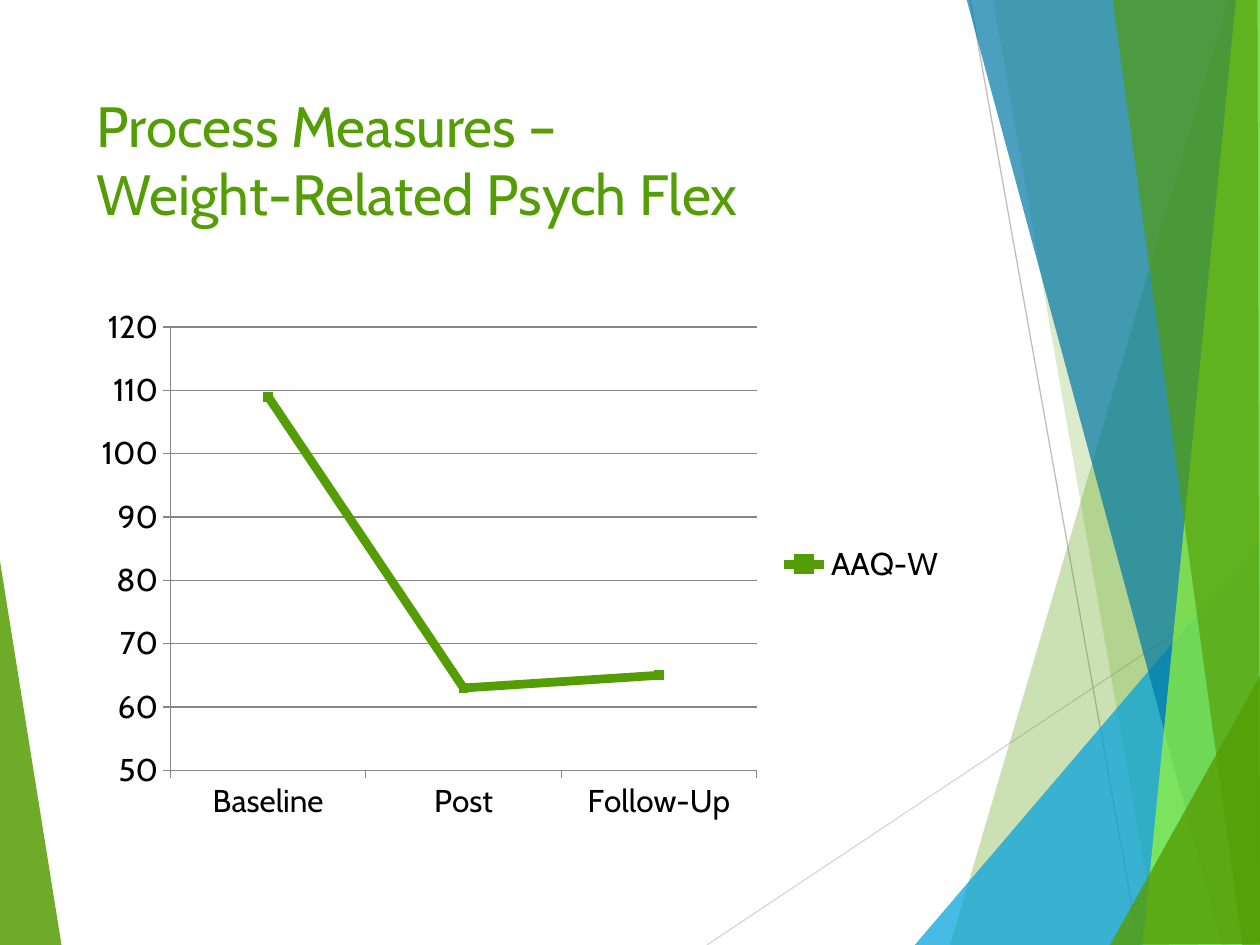
from pptx import Presentation
from pptx import util as u
from pptx.chart.data import CategoryChartData
from pptx.dml.color import RGBColor
from pptx.enum import chart as ch, shapes, text
from pptx.oxml.ns import qn
from lxml import etree

FONT = "Cabin"
GREEN = "549D04"
GRAY = "878787"

RAYS = [
    ("549D04", 30, [(9.75, 0), (7.54, 7.5), (10.02, 7.51), (10.01, 0.01)]),
    ("549D04", 20, [(7.88, -0.01), (9.19, 7.5), (10.01, 7.5), (10.01, -0.01)]),
    ("00A1DC", 72, [(7.26, 7.5), (10, 4.29), (10.01, 7.5)]),
    ("0079A5", 70, [(7.67, -0.01), (9.7, 7.5), (10.01, 7.49), (10.01, -0.01)]),
    ("9BFA33", 70, [(9.81, -0.01), (9.07, 7.5), (10.01, 7.5), (10, -0.01)]),
    ("549D04", 65, [(8.83, -0.01), (9.86, 7.5), (10, 7.5), (9.98, -0.01)]),
    ("549D04", 80, [(8.81, 7.5), (10.01, 5.35), (10.01, 7.49)]),
]


def rgb(color):
    return RGBColor.from_string(color)


def add_ray(s, color, opacity, points):
    start, *rest = [(u.Inches(x), u.Inches(y)) for x, y in points]
    fb = s.shapes.build_freeform(*start)
    fb.add_line_segments(rest, close=True)
    sp = fb.convert_to_shape()
    sp.shadow.inherit = False
    sp.line.fill.background()
    sp.fill.solid()
    sp.fill.fore_color.rgb = rgb(color)
    clr = sp.fill._xPr.find(".//" + qn("a:srgbClr"))
    etree.SubElement(clr, qn("a:alpha"), val=str(opacity * 1000))


def add_line(s, color, *ends):
    cx = s.shapes.add_connector(
        shapes.MSO_CONNECTOR.STRAIGHT, *(u.Inches(v) for v in ends))
    cx.line.color.rgb = rgb(color)
    cx.line.width = u.Pt(0.75)
    etree.SubElement(cx._element.spPr, qn("a:effectLst"))


def add_text(s, words, box, size=18, color="000000", font=FONT):
    tf = s.shapes.add_textbox(*(u.Inches(v) for v in box)).text_frame
    tf.word_wrap = True
    tf.vertical_anchor = text.MSO_ANCHOR.TOP
    p = tf.paragraphs[0]
    p.text = words
    for r in p.runs:
        r.font.size = u.Pt(size)
        r.font.name = font
        r.font.color.rgb = rgb(color)


def style_line(line, color, width):
    line.color.rgb = rgb(color)
    line.width = u.Pt(width)


def add_line_chart(s, box, cats, name, values):
    data = CategoryChartData()
    data.categories = cats
    data.add_series(name, values)
    chart = s.shapes.add_chart(
        ch.XL_CHART_TYPE.LINE_MARKERS, *(u.Inches(v) for v in box), data).chart
    chart.font.size = u.Pt(18)
    chart.font.name = FONT
    chart.font.color.rgb = rgb("000000")
    chart.has_title = False
    chart.has_legend = True
    chart.legend.position = ch.XL_LEGEND_POSITION.RIGHT
    chart.legend.include_in_layout = False

    for axis in (chart.category_axis, chart.value_axis):
        axis.major_tick_mark = ch.XL_TICK_MARK.OUTSIDE
        axis.minor_tick_mark = ch.XL_TICK_MARK.NONE
        style_line(axis.format.line, GRAY, 0.75)
    axis = chart.value_axis
    axis.minimum_scale, axis.maximum_scale, axis.major_unit = 50, 120, 10
    axis.has_major_gridlines = True
    style_line(axis.major_gridlines.format.line, GRAY, 0.75)

    plot = chart.plots[0]
    plot.vary_by_categories = False
    ser = plot.series[0]
    ser.smooth = False
    style_line(ser.format.line, GREEN, 5)
    ser.marker.style = ch.XL_MARKER_STYLE.SQUARE
    ser.marker.size = 5
    ser.marker.format.fill.solid()
    ser.marker.format.fill.fore_color.rgb = rgb(GREEN)
    style_line(ser.marker.format.line, GREEN, 0.75)


def main():
    prs = Presentation()
    prs.slide_width, prs.slide_height = u.Inches(10), u.Inches(7.5)
    s = prs.slides.add_slide(prs.slide_layouts[6])
    add_ray(s, GREEN, 85, [(-0.01, 4.39), (0.49, 7.51), (-0.01, 7.5)])
    add_line(s, "D9D9D9", 5.61, 7.5, 10.01, 4.57)
    add_line(s, "BFBFBF", 7.7, 0, 9.04, 7.5)
    for ray in RAYS:
        add_ray(s, *ray)
    add_text(s, "Process Measures –\vWeight-Related Psych Flex",
             (0.67, 0.67, 6.94, 1.44), size=32.4, color=GREEN)
    add_line_chart(s, (0.67, 2.36, 6.94, 4.24),
                   ("Baseline", "Post", "Follow-Up"), "AAQ-W", (109, 63, 65))
    prs.save("out.pptx")


if __name__ == "__main__":
    main()
